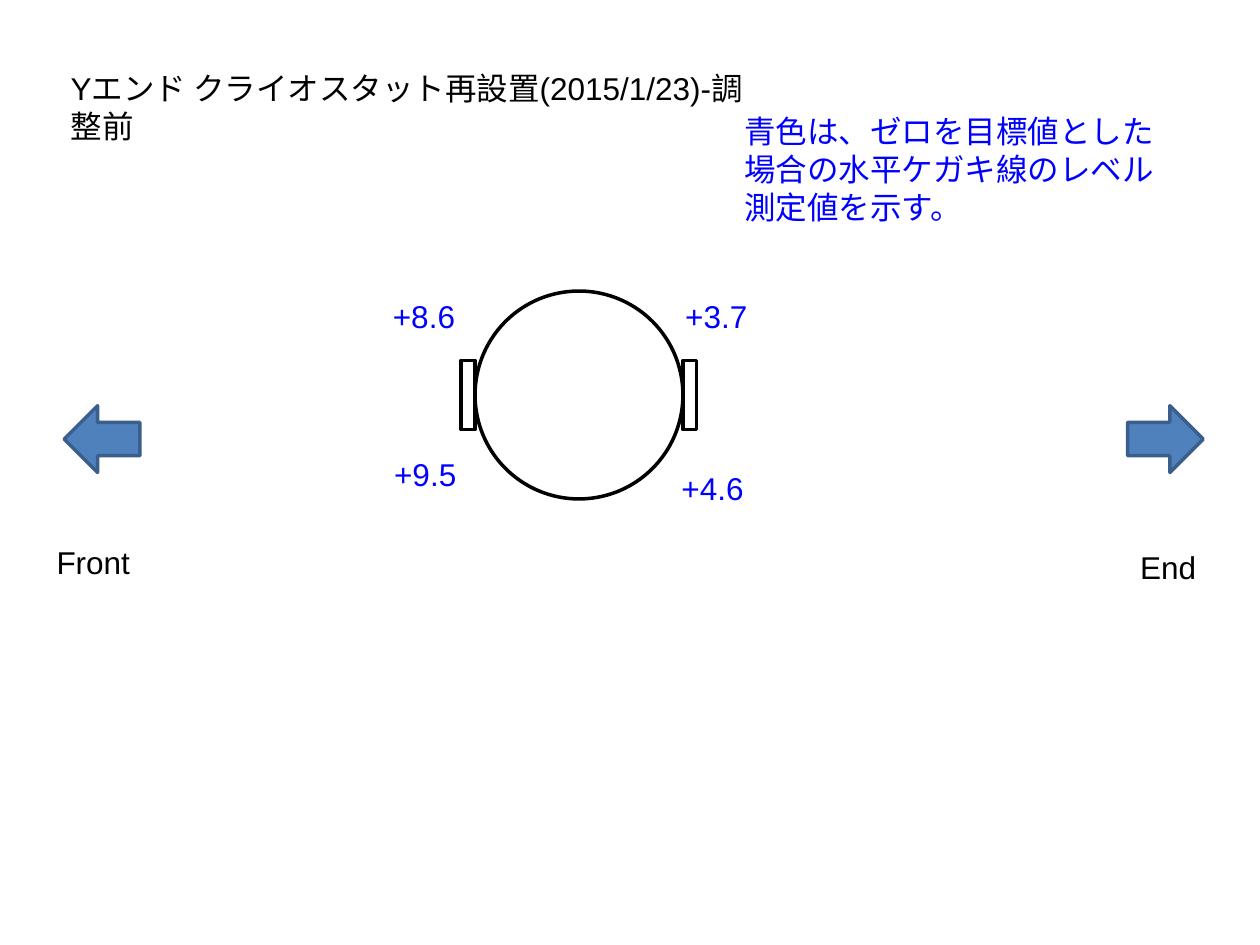
"""Build the cryostat level slide."""
from dataclasses import dataclass

from pptx import Presentation
from pptx.dml.color import RGBColor
from pptx.enum import shapes, text
from pptx.util import Inches, Pt


@dataclass(frozen=True)
class Theme:
    """Colours and type sizes."""
    ink: str = "000000"
    blue: str = "0000FF"
    fill: str = "4F81BD"
    edge: str = "3A5F8C"
    font: str = "Arial"
    size: int = 18
    line: int = 2


@dataclass(frozen=True)
class Box:
    """Place and size in inches."""
    x: float
    y: float
    w: float
    h: float

    def place(self) -> list:
        """Return left, top, width and height as lengths."""
        return [Inches(v) for v in (self.x, self.y, self.w, self.h)]


@dataclass(frozen=True)
class Label:
    """A line of text with its box and colour."""
    words: str
    box: Box
    color: str


@dataclass(frozen=True)
class Part:
    """A preset shape with its box."""
    kind: shapes.MSO_SHAPE
    box: Box


THEME = Theme()
KIND = shapes.MSO_SHAPE
TITLE = Label("Yエンド クライオスタット再設置(2015/1/23)-調整前",
              Box(0.46, 0.5, 5.57, 0.7), THEME.ink)
NOTE = Label("青色は、ゼロを目標値とした場合の水平ケガキ線のレベル測定値を示す。",
             Box(5.81, 0.84, 3.62, 1.01), THEME.blue)
LABELS = [
    Label("Front", Box(0.35, 4.26, 0.79, 0.4), THEME.ink),
    Label("End", Box(8.95, 4.3, 0.65, 0.4), THEME.ink),
    Label("+8.6", Box(3.02, 2.31, 0.7, 0.4), THEME.blue),
    Label("+3.7", Box(5.34, 2.31, 0.7, 0.4), THEME.blue),
    Label("+9.5", Box(3.03, 3.56, 0.7, 0.4), THEME.blue),
    Label("+4.6", Box(5.31, 3.67, 0.7, 0.4), THEME.blue),
]
TANK = [
    Part(KIND.OVAL, Box(3.77, 2.31, 1.65, 1.65)),
    Part(KIND.RECTANGLE, Box(3.66, 2.86, 0.11, 0.55)),
    Part(KIND.RECTANGLE, Box(5.42, 2.86, 0.11, 0.55)),
]
ARROWS = [
    Part(KIND.LEFT_ARROW, Box(0.51, 3.22, 0.6, 0.53)),
    Part(KIND.RIGHT_ARROW, Box(8.95, 3.22, 0.6, 0.53)),
]


def write(shape, words: str, *, color: str, wrap: bool = False,
          fit=text.MSO_AUTO_SIZE.SHAPE_TO_FIT_TEXT) -> None:
    """Put formatted text in a shape."""
    frame = shape.text_frame
    frame.word_wrap = wrap
    frame.auto_size = fit
    frame.vertical_anchor = text.MSO_ANCHOR.TOP
    para = frame.paragraphs[0]
    para.alignment = text.PP_ALIGN.LEFT
    run = para.add_run()
    run.text = words
    run.font.name = THEME.font
    run.font.size = Pt(THEME.size)
    run.font.color.rgb = RGBColor.from_string(color)


def label(slide, item: Label, wrap: bool = False) -> None:
    """Add a text box."""
    box = slide.shapes.add_textbox(*item.box.place())
    write(box, item.words, color=item.color, wrap=wrap)


def draw(tree, part: Part, edge: str, fill: str = "") -> None:
    """Add an outlined shape, filled if a colour is given."""
    shape = tree.add_shape(part.kind, *part.box.place())
    shape.shadow.inherit = False
    shape.line.color.rgb = RGBColor.from_string(edge)
    shape.line.width = Pt(THEME.line)
    if fill:
        shape.fill.solid()
        shape.fill.fore_color.rgb = RGBColor.from_string(fill)
    else:
        shape.fill.background()


def main() -> None:
    """Build and save the slide."""
    deck = Presentation()
    deck.slide_width, deck.slide_height = Inches(10), Inches(7.5)
    slide = deck.slides.add_slide(deck.slide_layouts.get_by_name("Title Only"))
    head = slide.shapes.title
    head.left, head.top, head.width, head.height = TITLE.box.place()
    write(head, TITLE.words, color=TITLE.color, wrap=True,
          fit=text.MSO_AUTO_SIZE.NONE)
    group = slide.shapes.add_group_shape()
    for part in TANK:
        draw(group.shapes, part, THEME.ink)
    for part in ARROWS:
        draw(slide.shapes, part, THEME.edge, THEME.fill)
    for item in LABELS:
        label(slide, item)
    label(slide, NOTE, wrap=True)
    deck.save("out.pptx")


if __name__ == "__main__":
    main()
